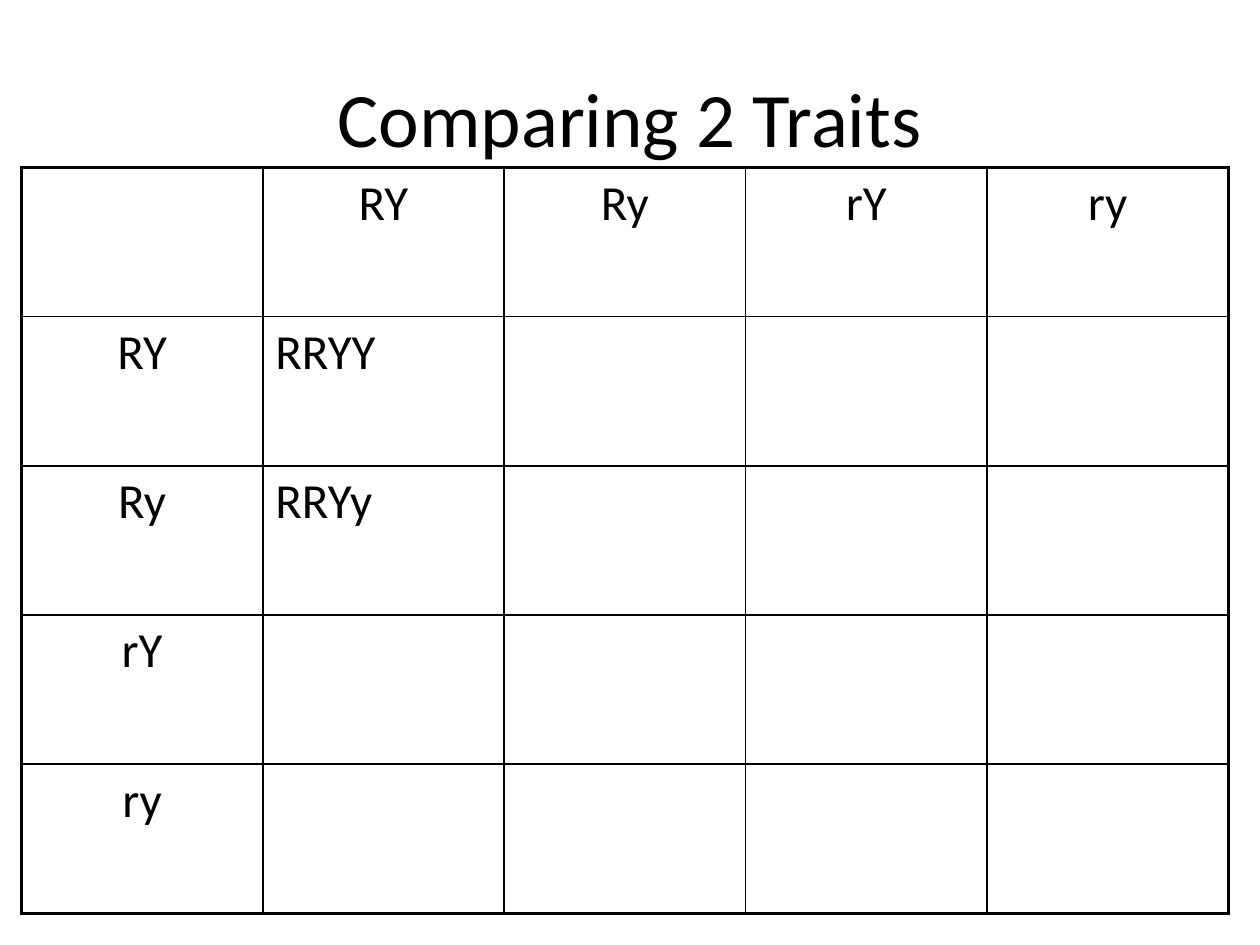
from lxml import etree
from pptx import Presentation
from pptx import util as u
from pptx.dml.color import RGBColor
from pptx.enum import text
from pptx.oxml.ns import qn

COLORS = {"ink": "000000", "paper": "FFFFFF"}
GAMETES = ["RY", "Ry", "rY", "ry"]
OFFSPRING = {(1, 1): "RRYY", (2, 1): "RRYy"}


class Deck:
    font = "Calibri"
    thin, thick = 1, 2.25

    def __init__(self, width, height):
        self.prs = Presentation()
        self.prs.slide_width = u.Inches(width)
        self.prs.slide_height = u.Inches(height)

    def add_slide(self):
        self.s = self.prs.slides.add_slide(self.prs.slide_layouts[5])
        fill = self.s.background.fill
        fill.solid()
        fill.fore_color.rgb = RGBColor.from_string(COLORS["paper"])

    def style(self, p, size, align):
        p.alignment = align
        p.font.name = self.font
        p.font.size = u.Pt(size)
        p.font.color.rgb = RGBColor.from_string(COLORS["ink"])

    def title(self, words, x, y, w, h):
        sp = self.s.shapes.title
        sp.left, sp.top, sp.width, sp.height = map(u.Inches, (x, y, w, h))
        tf = sp.text_frame
        tf.text = words
        tf.vertical_anchor = text.MSO_ANCHOR.MIDDLE
        self.style(tf.paragraphs[0], 44, text.PP_ALIGN.CENTER)

    def border(self, cell, side, width):
        tcPr = cell._tc.get_or_add_tcPr()
        ln = etree.SubElement(tcPr, qn(f"a:ln{side}"), w=str(u.Pt(width)))
        fill = etree.SubElement(ln, qn("a:solidFill"))
        etree.SubElement(fill, qn("a:srgbClr"), val=COLORS["ink"])

    def space_before(self, p, percent):
        spc = etree.Element(qn("a:spcBef"))
        etree.SubElement(spc, qn("a:spcPct"), val=str(percent * 1000))
        p._p.get_or_add_pPr().insert(0, spc)

    def table(self, rows, x, y, w, h):
        n_rows, n_cols = len(rows), len(rows[0])
        frame = self.s.shapes.add_table(n_rows, n_cols, *map(u.Inches, (x, y, w, h)))
        table = frame.table
        table.first_row = table.horz_banding = False
        for i, row in enumerate(rows):
            for j, words in enumerate(row):
                cell = table.cell(i, j)
                outer = {"L": j == 0, "R": j == n_cols - 1,
                         "T": i == 0, "B": i == n_rows - 1}
                for side, is_outer in outer.items():
                    self.border(cell, side, self.thick if is_outer else self.thin)
                cell.fill.background()
                cell.text = words
                p = cell.text_frame.paragraphs[0]
                heading = i == 0 or j == 0
                self.style(p, 28, text.PP_ALIGN.CENTER if heading else text.PP_ALIGN.LEFT)
                self.space_before(p, 20)


def main():
    deck = Deck(10, 7.5)
    deck.add_slide()
    deck.title("Comparing 2 Traits", 0.5, 0.3, 9, 1.25)
    rows = [["", *GAMETES]]
    for i, gamete in enumerate(GAMETES, 1):
        rows.append([gamete] + [OFFSPRING.get((i, j), "") for j in range(1, 5)])
    deck.table(rows, 0.17, 1.33, 9.58, 5.92)
    deck.prs.save("out.pptx")


if __name__ == "__main__":
    main()
